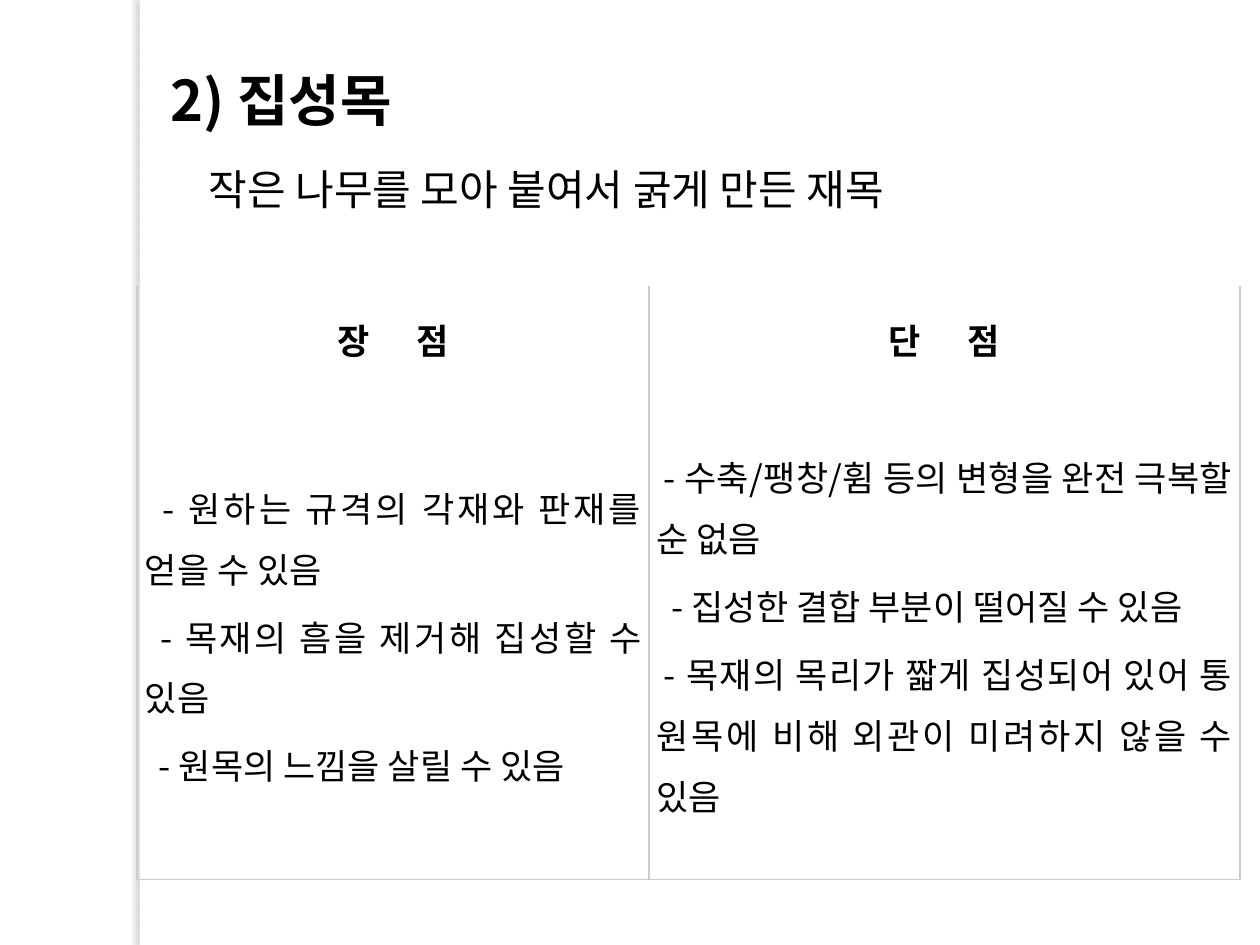
import pptx
import pptx.dml.color
import pptx.enum.shapes
import pptx.enum.text
import pptx.oxml
import pptx.oxml.ns
import pptx.util
from pptx.util import Inches

TITLE = "2) 집성목"
DEFINITION = "작은 나무를 모아 붙여서 굵게 만든 재목"
# Each column: heading syllables, width, points as (first-line indent, wording)
COLUMNS = [
    (("장", "점"), 4.06, [
        (0.14, "- 원하는 규격의 각재와 판재를 얻을 수 있음"),
        (0.12, "- 목재의 흠을 제거해 집성할 수 있음"),
        (0.11, "- 원목의 느낌을 살릴 수 있음"),
    ]),
    (("단", "점"), 4.69, [
        (0.06, "- 수축/팽창/휨 등의 변형을 완전 극복할 순 없음"),
        (0.12, "- 집성한 결합 부분이 떨어질 수 있음"),
        (0.06, "- 목재의 목리가 짧게 집성되어 있어 통 원목에 비해 외관이 미려하지 않을 수 있음"),
    ]),
]
ROW_HEIGHTS = (0.76, 3.95)
THEME = {
    "font": "Noto Sans CJK KR",
    "ink": "000000", "paper": "FFFFFF", "rule": "CCCCCC", "shade": "736F63",
    "title": 32, "definition": 24, "table": 20, "rule_width": 1.13,
    "heading_spacing": 11,
}
ALIGN = pptx.enum.text.PP_ALIGN
ANCHOR = pptx.enum.text.MSO_ANCHOR


def rgb(key):
    return pptx.dml.color.RGBColor.from_string(THEME[key])


def xml(markup):
    return pptx.oxml.parse_xml(markup.replace(
        " ", f' {pptx.oxml.ns.nsdecls("a")} ', 1))


def style(paragraph, size, bold=False, align=ALIGN.LEFT):
    paragraph.alignment = align
    font = paragraph.font
    font.size, font.bold = pptx.util.Pt(THEME[size]), bold
    font.color.rgb = rgb("ink")
    font.name = THEME["font"]
    defaults = paragraph._p.pPr.find(pptx.oxml.ns.qn("a:defRPr"))
    defaults.append(xml(f'<a:ea typeface="{THEME["font"]}"/>'))


def style_cell_paragraph(paragraph, bold, align):
    style(paragraph, "table", bold, align)
    paragraph.line_spacing = 1.2
    paragraph.space_after = pptx.util.Pt(4)


def set_borders(cell, ruled_sides):
    width = pptx.util.Pt(THEME["rule_width"])
    for side in "LRTB":
        fill = (f'<a:solidFill><a:srgbClr val="{THEME["rule"]}"/></a:solidFill>'
                if side in ruled_sides else "<a:noFill/>")
        cell._tc.get_or_add_tcPr().append(
            xml(f'<a:ln{side} w="{width}">{fill}</a:ln{side}>'))


def prepare_cell(cell, ruled_sides):
    set_borders(cell, ruled_sides)
    cell.fill.background()
    cell.vertical_anchor = ANCHOR.MIDDLE
    cell.margin_left = cell.margin_right = Inches(0.06)
    cell.margin_top = cell.margin_bottom = Inches(0.02)


def add_edge_strip(slide):
    strip = slide.shapes.add_shape(
        pptx.enum.shapes.MSO_SHAPE.RECTANGLE,
        Inches(1.11), 0, Inches(0.08), Inches(7.5))
    strip.fill.solid()
    strip.fill.fore_color.rgb = rgb("paper")
    strip.line.fill.background()
    strip.shadow.inherit = False
    effects = strip._element.spPr.find(pptx.oxml.ns.qn("a:effectLst"))
    effects.append(xml(
        f'<a:outerShdw blurRad="{pptx.util.Pt(3)}" dist="{pptx.util.Pt(3)}" '
        f'dir="10800000"><a:srgbClr val="{THEME["shade"]}">'
        '<a:alpha val="25000"/></a:srgbClr></a:outerShdw>'))


def add_title(slide):
    title = slide.shapes.title
    title.left, title.top = Inches(1.25), Inches(0.47)
    title.width, title.height = Inches(4.02), Inches(0.64)
    title.text_frame.text = TITLE
    title.text_frame.vertical_anchor = ANCHOR.TOP
    style(title.text_frame.paragraphs[0], "title", bold=True)


def add_definition(slide):
    frame = slide.shapes.add_textbox(
        Inches(1.56), Inches(1.25), Inches(6.88), Inches(0.5)).text_frame
    frame.word_wrap = True
    frame.text = DEFINITION
    style(frame.paragraphs[0], "definition")


def fill_heading(cell, syllables):
    paragraph = cell.text_frame.paragraphs[0]
    first, last = syllables
    spaced = paragraph.add_run()
    spaced.text = first + " "
    spaced._r.get_or_add_rPr().set("spc", str(THEME["heading_spacing"] * 100))
    paragraph.add_run().text = last
    style_cell_paragraph(paragraph, True, ALIGN.CENTER)


def fill_points(cell, points):
    cell.text_frame.text = "\n".join(wording for _, wording in points)
    for paragraph, (indent, _) in zip(cell.text_frame.paragraphs, points):
        style_cell_paragraph(paragraph, False, ALIGN.JUSTIFY)
        paragraph._p.pPr.set("marL", "0")
        paragraph._p.pPr.set("indent", str(Inches(indent)))


def add_comparison(slide):
    table = slide.shapes.add_table(
        len(ROW_HEIGHTS), len(COLUMNS), Inches(1.09), Inches(2.27),
        Inches(sum(width for _, width, _ in COLUMNS)),
        Inches(sum(ROW_HEIGHTS))).table
    table.first_row = table.horz_banding = False
    for row, height in zip(table.rows, ROW_HEIGHTS):
        row.height = Inches(height)
    for index, (heading, width, points) in enumerate(COLUMNS):
        table.columns[index].width = Inches(width)
        top, bottom = table.cell(0, index), table.cell(1, index)
        prepare_cell(top, "LR")
        prepare_cell(bottom, "LRB")
        fill_heading(top, heading)
        fill_points(bottom, points)


def main():
    deck = pptx.Presentation()
    deck.slide_width, deck.slide_height = Inches(10), Inches(7.5)
    slide = deck.slides.add_slide(deck.slide_layouts[5])
    add_edge_strip(slide)
    add_title(slide)
    add_comparison(slide)
    add_definition(slide)
    deck.save("out.pptx")


if __name__ == "__main__":
    main()
